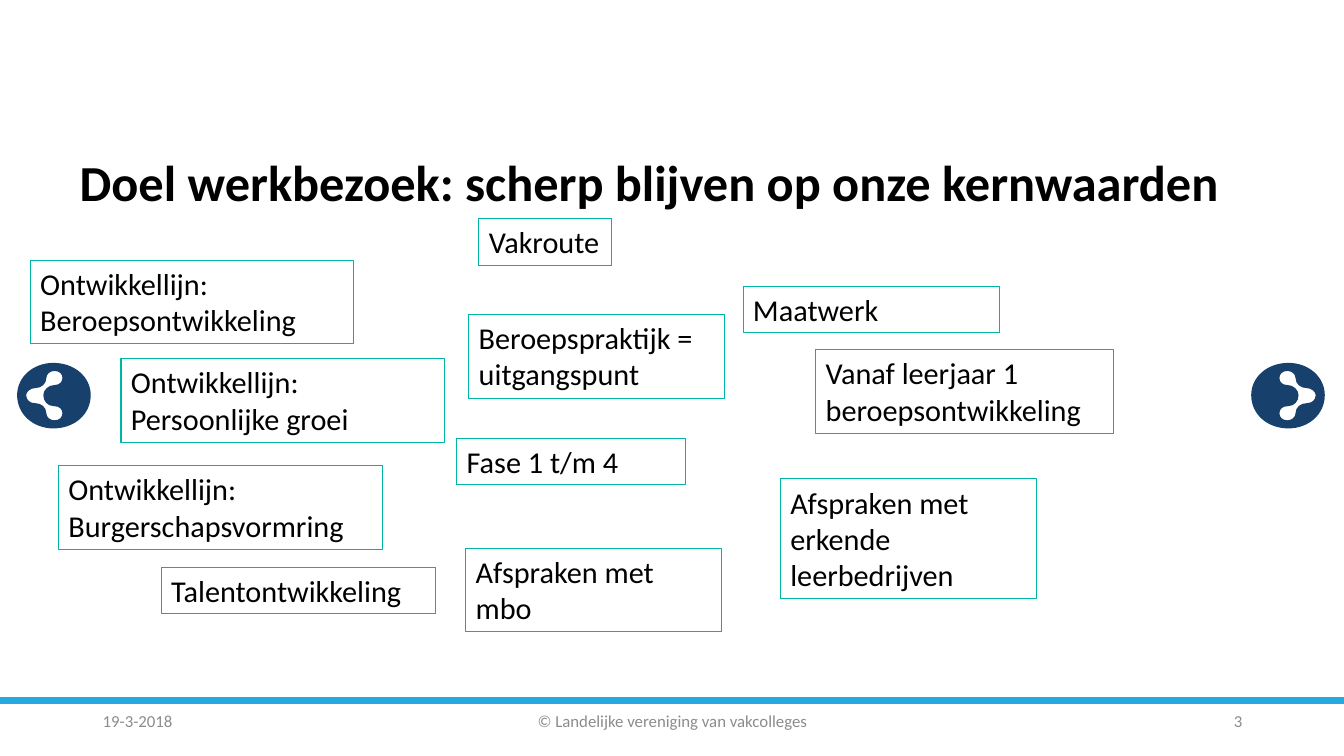
from dataclasses import dataclass
from lxml.etree import SubElement
from pptx import Presentation
from pptx.dml.color import RGBColor as RGB
from pptx.enum.shapes import MSO_CONNECTOR as Conn, MSO_SHAPE as Kind
from pptx.enum.text import MSO_ANCHOR as Anchor, MSO_AUTO_SIZE as Fit, PP_ALIGN as Align
from pptx.oxml.ns import qn
from pptx.util import Inches, Pt


@dataclass(frozen=True)
class Theme:
    font: str = "Calibri"
    black: RGB = RGB(0, 0, 0)
    grey: RGB = RGB(0x8C, 0x8C, 0x8C)
    teal: RGB = RGB(0x00, 0xB5, 0xA5)
    navy: RGB = RGB(0x17, 0x40, 0x6D)
    blue: RGB = RGB(0x27, 0xA8, 0xE0)
    head: float = 36
    body: float = 21.6
    small: float = 12


theme = Theme()

# Content
TITLE = "Doel werkbezoek: scherp blijven op onze kernwaarden"
BOXES = [  # text, left, top, width, lines
    ("Vanaf leerjaar 1 beroepsontwikkeling", 8.09, 3.47, 2.95, 2),
    ("Vakroute", 4.75, 2.17, 1.32, 1),
    ("Fase 1 t/m 4", 4.53, 4.35, 2.27, 1),
    ("Beroepspraktijk = uitgangspunt", 4.65, 3.12, 2.54, 2),
    ("Ontwikkellijn:\nBurgerschapsvormring", 0.58, 4.62, 3.21, 2),
    ("Afspraken met mbo", 4.62, 5.44, 2.54, 2),
    ("Afspraken met erkende leerbedrijven", 7.74, 4.75, 2.54, 3),
    ("Maatwerk", 7.37, 2.84, 2.54, 1),
    ("Talentontwikkeling", 1.6, 5.63, 2.72, 1),
    ("Ontwikkellijn:\nBeroepsontwikkeling", 0.3, 2.58, 3.21, 2),
    ("Ontwikkellijn:\nPersoonlijke groei", 1.2, 3.56, 3.21, 2),
]
FOOTER = [  # text, left, width, alignment
    ("19-3-2018", 0.92, 3, Align.LEFT),
    ("© Landelijke vereniging van vakcolleges", 4.42, 4.5, Align.CENTER),
    ("3", 9.42, 3, Align.RIGHT),
]
HEIGHT = {1: 0.46, 2: 0.83, 3: 1.19}
WIDE, BAR = 13.33, 6.95

# Button outlines in inches: a start, then three points for each curve
BRANCH = [
    (12.77, 3.68),
    (12.81, 3.68), (12.85, 3.71), (12.85, 3.75),
    (12.85, 3.81), (12.9, 3.85), (12.96, 3.85),
    (13.01, 3.85), (13.05, 3.89), (13.05, 3.92),
    (13.05, 3.97), (13.01, 4), (12.96, 4),
    (12.9, 4), (12.85, 4.04), (12.85, 4.1),
    (12.85, 4.14), (12.81, 4.17), (12.77, 4.17),
    (12.72, 4.17), (12.69, 4.14), (12.69, 4.1),
    (12.69, 4.06), (12.72, 4.03), (12.77, 4.03),
    (12.84, 4.03), (12.88, 3.98), (12.88, 3.92),
    (12.88, 3.87), (12.83, 3.82), (12.77, 3.82),
    (12.72, 3.82), (12.69, 3.79), (12.69, 3.75),
    (12.69, 3.71), (12.72, 3.68), (12.77, 3.68),
]
DISC = [
    (12.78, 4.25),
    (12.98, 4.25), (13.14, 4.11), (13.14, 3.92),
    (13.14, 3.74), (12.98, 3.6), (12.78, 3.6),
    (12.57, 3.6), (12.41, 3.74), (12.41, 3.92),
    (12.41, 4.11), (12.57, 4.25), (12.78, 4.25),
]
MIRROR = 13.31


def bend(shape):
    """Join each three line points into one curve."""
    lines = list(shape._element.iter(qn("a:lnTo")))
    for i in range(0, len(lines), 3):
        trio = lines[i:i + 3]
        route = trio[0].getparent()
        curve = SubElement(route, qn("a:cubicBezTo"))
        route.replace(trio[0], curve)
        for line in trio:
            curve.append(line[0])
        for line in trio[1:]:
            route.remove(line)


def button(flip):
    branch, disc = [[(Inches(MIRROR - x if flip else x), Inches(y)) for x, y in loop]
                    for loop in (BRANCH, DISC)]
    pen = slide.shapes.build_freeform(*branch[0])
    pen.add_line_segments(branch[1:], close=False)
    pen.move_to(*disc[0])
    pen.add_line_segments(disc[1:], close=False)
    shape = pen.convert_to_shape()
    bend(shape)
    shape.shadow.inherit = False
    shape.fill.solid()
    shape.fill.fore_color.rgb = theme.navy
    shape.line.fill.background()


def write(shape, text, size, color, align=Align.LEFT, anchor=Anchor.MIDDLE,
          fit=Fit.NONE, bold=False):
    frame = shape.text_frame
    frame.text = text
    frame.word_wrap = True
    frame.auto_size = fit
    frame.vertical_anchor = anchor
    for para in frame.paragraphs:
        para.alignment = align
        for run in para.runs:
            font = run.font
            font.name, font.size, font.bold = theme.font, Pt(size), bold
            font.color.rgb = color


deck = Presentation()
deck.slide_width, deck.slide_height = Inches(WIDE), Inches(7.5)
slide = deck.slides.add_slide(deck.slide_layouts[5])

# Buttons and footer bar
for flip in (False, True):
    button(flip)
bar = slide.shapes.add_connector(Conn.STRAIGHT, 0, Inches(BAR), Inches(WIDE), Inches(BAR))
bar.line.color.rgb = theme.blue
bar.line.width = Pt(4.5)
SubElement(bar._element.spPr, qn("a:effectLst"))

# Title
title = slide.shapes.title
title.left, title.top = Inches(0.69), Inches(1.21)
title.width, title.height = Inches(11.87), Inches(1.25)
write(title, TITLE, theme.head, theme.black, bold=True)
title.text_frame.paragraphs[0].line_spacing = 0.9

# Core value boxes
for text, left, top, width, lines in BOXES:
    box = slide.shapes.add_shape(Kind.RECTANGLE, Inches(left), Inches(top),
                                 Inches(width), Inches(HEIGHT[lines]))
    box.shadow.inherit = False
    box.fill.background()
    box.line.color.rgb = theme.teal
    box.line.width = Pt(0.75)
    write(box, text, theme.body, theme.black, anchor=Anchor.TOP, fit=Fit.SHAPE_TO_FIT_TEXT)

# Footer
for text, left, width, align in FOOTER:
    note = slide.shapes.add_textbox(Inches(left), Inches(BAR), Inches(width), Inches(0.4))
    write(note, text, theme.small, theme.grey, align)

deck.save("out.pptx")
